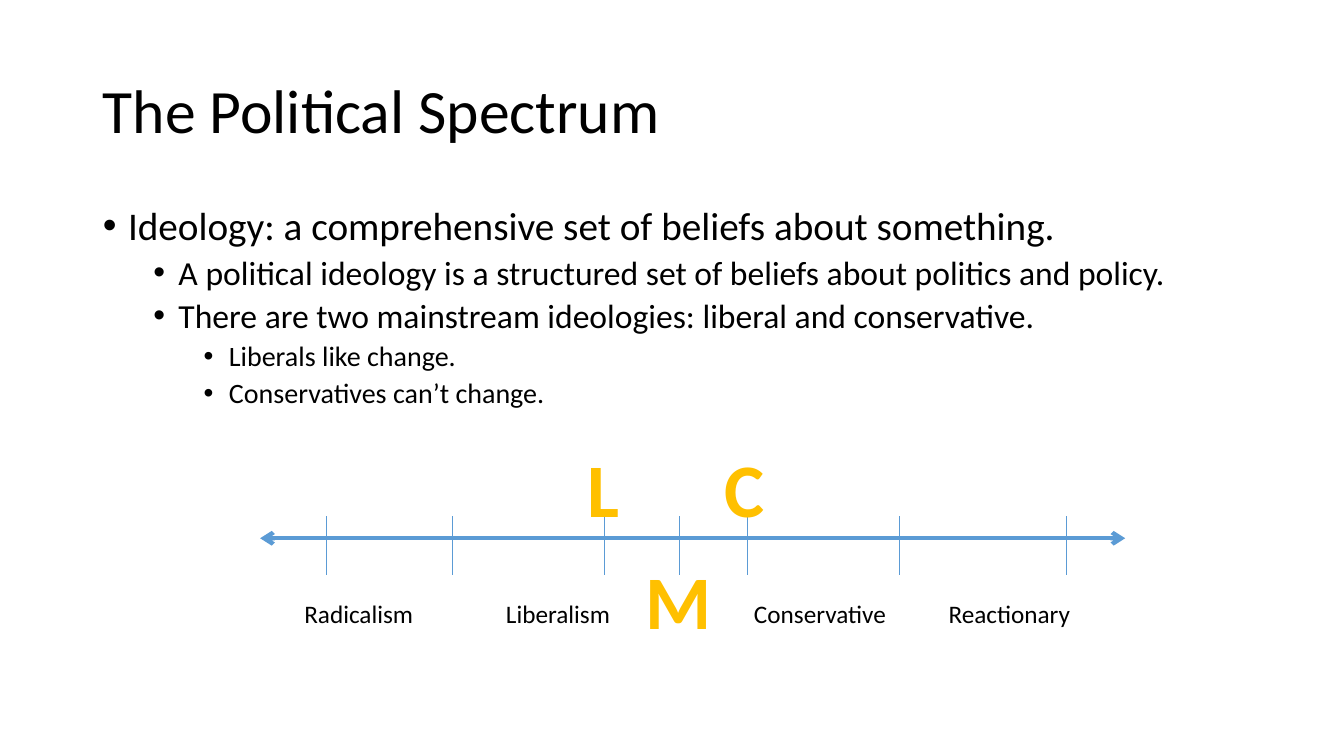
from pptx import Presentation
from pptx.dml.color import RGBColor
from pptx.enum.shapes import MSO_CONNECTOR
from pptx.enum.text import MSO_ANCHOR, MSO_AUTO_SIZE, PP_ALIGN
from pptx.oxml.ns import qn
from pptx.util import Inches, Pt
from lxml import etree

BLACK = RGBColor(0x00, 0x00, 0x00)
BLUE = RGBColor(0x5B, 0x9B, 0xD5)
GOLD = RGBColor(0xFF, 0xC0, 0x00)
FONT = "Calibri"
LEFT, CENTER = PP_ALIGN.LEFT, PP_ALIGN.CENTER
STRAIGHT = MSO_CONNECTOR.STRAIGHT

TITLE = "The Political Spectrum"
BULLETS = [  # level, text
    (0, "Ideology: a comprehensive set of beliefs about something."),
    (1, "A political ideology is a structured set of beliefs about politics and policy."),
    (1, "There are two mainstream ideologies: liberal and conservative."),
    (2, "Liberals like change."),
    (2, "Conservatives can’t change."),
]
LEVEL_SIZES = [28, 24, 20]
LEVEL_SPACE_BEFORE = [10, 5, 5]

AXIS_Y = 5.34
AXIS_ARROWS = [(6.66, 11.16), (6.83, 2.58)]  # start x, tip x
TICK_TOP, TICK_BOTTOM = 5.12, 5.7
TICKS = [3.24, 4.49, 5.99, 6.74, 7.41, 8.92, 10.58]
LETTERS = [  # text, left, top, width
    ("M", 6.3, 5.45, 0.86),
    ("C", 7.08, 4.33, 0.6),
    ("L", 5.73, 4.33, 0.52),
]
LETTER_HEIGHT = 1.01
LABELS = [  # text, left, width, tab stop
    ("Radicalism\tLiberalism", 2.92, 3.33, 2.0),
    ("Conservative\tReactionary", 7.38, 3.36, 1.93),
]
LABEL_TOP, LABEL_HEIGHT = 5.89, 0.4


def place(shape, left, top, width, height):
    shape.left, shape.top = Inches(left), Inches(top)
    shape.width, shape.height = Inches(width), Inches(height)


def style(paragraph, size, color=BLACK, bold=False, align=LEFT):
    font = paragraph.font
    font.name, font.size, font.bold = FONT, Pt(size), bold
    font.color.rgb = color
    paragraph.alignment = align


def add_bullet(paragraph, level):
    properties = paragraph._p.get_or_add_pPr()
    properties.set("marL", str(Inches(0.25 + 0.5 * level)))
    properties.set("indent", str(-Inches(0.25)))
    etree.SubElement(properties, qn("a:buFont")).set("typeface", "Arial")
    etree.SubElement(properties, qn("a:buChar")).set("char", "•")


def add_line(slide, start, end, width, arrow=False):
    line = slide.shapes.add_connector(STRAIGHT, *map(Inches, start + end))
    line.line.color.rgb = BLUE
    line.line.width = Pt(width)
    properties = line._element.spPr
    if arrow:
        outline = properties.find(qn("a:ln"))
        etree.SubElement(outline, qn("a:tailEnd")).set("type", "arrow")
    etree.SubElement(properties, qn("a:effectLst"))


def add_text(slide, text, left, top, width, height, wrap):
    box = slide.shapes.add_textbox(*map(Inches, (left, top, width, height)))
    box.text_frame.word_wrap = wrap
    paragraph = box.text_frame.paragraphs[0]
    paragraph.text = text
    return paragraph


def fill_placeholders(slide):
    title, body = slide.placeholders
    place(title, 0.92, 0.4, 11.5, 1.45)
    title.text_frame.text = TITLE
    title.text_frame.vertical_anchor = MSO_ANCHOR.MIDDLE
    title.text_frame.auto_size = MSO_AUTO_SIZE.NONE
    heading = title.text_frame.paragraphs[0]
    heading.line_spacing = 0.9
    style(heading, 44)

    place(body, 0.92, 2, 11.5, 4.76)
    frame = body.text_frame
    frame.auto_size = MSO_AUTO_SIZE.NONE
    frame.text = "\n".join(text for _, text in BULLETS)
    for paragraph, (level, _) in zip(frame.paragraphs, BULLETS):
        paragraph.level = level
        paragraph.line_spacing = 0.9
        paragraph.space_before = Pt(LEVEL_SPACE_BEFORE[level])
        style(paragraph, LEVEL_SIZES[level])
        add_bullet(paragraph, level)


def draw_spectrum(slide):
    for start, tip in AXIS_ARROWS:
        add_line(slide, (start, AXIS_Y), (tip, AXIS_Y), 3, arrow=True)
    for x in TICKS:
        add_line(slide, (x, TICK_TOP), (x, TICK_BOTTOM), 0.5)
    for text, left, top, width in LETTERS:
        letter = add_text(slide, text, left, top, width, LETTER_HEIGHT, False)
        style(letter, 54, GOLD, True, CENTER)
    for text, left, width, stop in LABELS:
        label = add_text(slide, text, left, LABEL_TOP, width, LABEL_HEIGHT, True)
        style(label, 18)
        tabs = etree.Element(qn("a:tabLst"))
        etree.SubElement(tabs, qn("a:tab"), pos=str(Inches(stop)), algn="l")
        label._p.get_or_add_pPr().find(qn("a:defRPr")).addprevious(tabs)


def main():
    presentation = Presentation()
    presentation.slide_width, presentation.slide_height = Inches(13.33), Inches(7.5)
    slide = presentation.slides.add_slide(presentation.slide_layouts[1])
    fill_placeholders(slide)
    draw_spectrum(slide)
    presentation.save("out.pptx")


if __name__ == "__main__":
    main()
